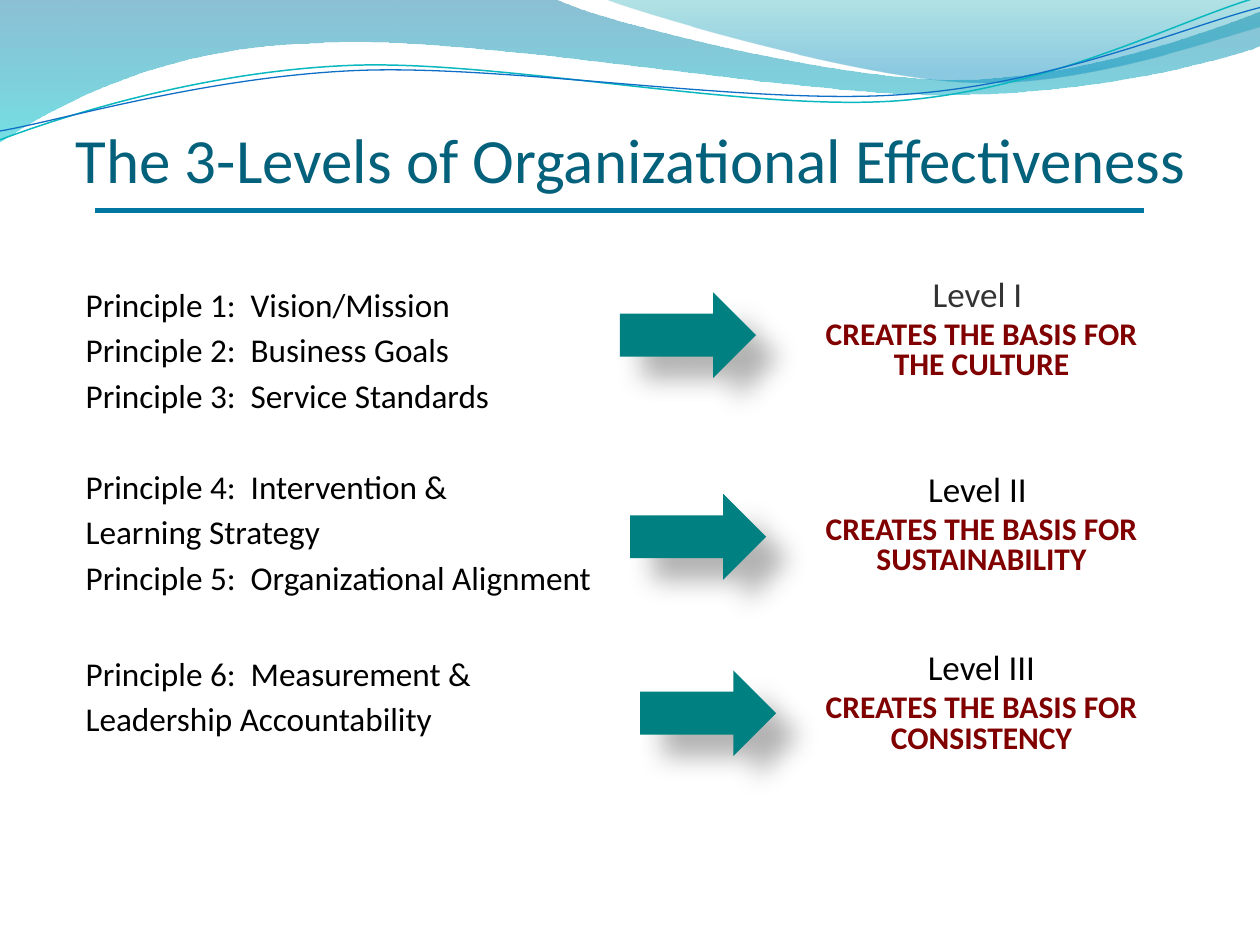
from lxml.etree import SubElement
from pptx import Presentation
from pptx.dml.color import RGBColor
from pptx.enum.shapes import MSO_CONNECTOR as Link, MSO_SHAPE as Shape
from pptx.enum.text import MSO_ANCHOR as Anchor, MSO_AUTO_SIZE as Fit, PP_ALIGN as Align
from pptx.oxml.ns import qn
from pptx.util import Inches, Pt

WIDE, HIGH = 10, 7.5
FONT = "Calibri"
HUE = {
    "title": "04617B", "rule": "0076A3", "text": "000000", "soft": "333333",
    "claim": "800000", "arrow": "008080", "teal": "0AB8BF", "blue": "0F6FC6",
    "deep": "0074A1", "aqua": "00C6CF", "sea": "00A1A9", "sky": "008BBF",
}

# Waves: start point, then steps of 1 point (line) or 3 points (curve)
BANDS = [
    ([(0, 0), [(4.4, -0.01)],
      [(4.76, 0.17), (6.64, 0.63), (7.58, 0.63)],
      [(8.53, 0.63), (9.58, 0.26), (10, 0.09)], [(10.01, 0.36)],
      [(9.83, 0.44), (8.7, 0.76), (7.46, 0.75)],
      [(6.22, 0.75), (3.82, 0.28), (2.57, 0.34)],
      [(1.29, 0.36), (0.46, 0.83), (-0.01, 1.13)], [(0, 0)]],
     [(0, "deep", 45), (1, "aqua", 55)]),
    ([(4.79, -0.01), [(5.09, 0.11), (6.82, 0.62), (7.69, 0.65)],
      [(8.56, 0.69), (9.61, 0.32), (10, 0.21)], [(10, 0)], [(4.79, -0.01)]],
     [(0, "sea", 30), (0.8, "sky", 45)]),
]
CURVES = [
    ([(0, 1.11), [(0.48, 0.93), (1.58, 0.57), (2.77, 0.52)],
      [(3.95, 0.47), (5.93, 0.89), (7.13, 0.8)],
      [(8.33, 0.71), (9.38, 0.15), (9.98, -0.02)]], "teal", 0.85),
    ([(0, 1.04), [(0.47, 0.96), (1.64, 0.61), (2.83, 0.56)],
      [(4.03, 0.51), (5.97, 0.84), (7.17, 0.75)],
      [(8.36, 0.67), (9.41, 0.21), (10, 0.06)]], "blue", 0.75),
]

# Principles by level: space above the group in points, then its lines
GROUPS = [
    (0, ["Principle 1:  Vision/Mission", "Principle 2:  Business Goals",
         "Principle 3:  Service Standards"]),
    (26, ["Principle 4:  Intervention &", "Learning Strategy",
          "Principle 5:  Organizational Alignment"]),
    (29, ["Principle 6:  Measurement &", "Leadership Accountability"]),
]
# Levels: space above, name, colour of the name, claim
LEVELS = [
    (0, "Level I ", "soft", "CREATES THE BASIS FOR THE CULTURE"),
    (53.6, "Level II ", "text", "CREATES THE BASIS FOR SUSTAINABILITY"),
    (44.2, "Level III", "text", "CREATES THE BASIS FOR CONSISTENCY"),
]
ARROWS = [2.32, 3.92, 5.32]


def rgb(name):
    return RGBColor.from_string(HUE[name])


def bend(wave, steps):
    """Join the points of each curved step into one cubic curve."""
    lines = iter(list(wave.element.iter(qn("a:lnTo"))))
    for step in steps:
        parts = [next(lines) for _ in step]
        if len(parts) == 3:
            parts[0].addprevious(cubic := parts[0].makeelement(qn("a:cubicBezTo")))
            for part in parts:
                cubic.append(part[0])
                part.getparent().remove(part)


def add_wave(slide, path, order, closed):
    start, *steps = path
    pen = slide.shapes.build_freeform(*map(Inches, start))
    pen.add_line_segments(
        [(Inches(x), Inches(y)) for step in steps for x, y in step], close=closed)
    wave = pen.convert_to_shape()
    bend(wave, steps)
    wave.shadow.inherit = False
    # Waves lie behind the placeholders
    slide.shapes.element.insert(2 + order, wave.element)
    return wave


def add_band(slide, path, stops, order):
    band = add_wave(slide, path, order, True)
    band.line.fill.background()
    band.fill.gradient()
    band.fill.gradient_angle = 270
    for stop, (spot, tone, _) in zip(band.fill.gradient_stops, stops):
        stop.position = spot
        stop.color.rgb = rgb(tone)
    for tint, (_, _, alpha) in zip(band.element.spPr.iter(qn("a:srgbClr")), stops):
        SubElement(tint, qn("a:alpha"), val=str(alpha * 1000))


def add_curve(slide, path, tone, width, order):
    curve = add_wave(slide, path, order, False)
    curve.fill.background()
    curve.line.color.rgb = rgb(tone)
    curve.line.width = Pt(width)


def place(holder, left, top, width, height, inset=0.04):
    holder.left, holder.top = Inches(left), Inches(top)
    holder.width, holder.height = Inches(width), Inches(height)
    frame = holder.text_frame
    frame.word_wrap = True
    frame.auto_size = Fit.NONE
    frame.vertical_anchor = Anchor.TOP
    frame.margin_top = Inches(inset)
    return frame


def add_line(frame, text, size, tone, above=0, gap=1.0, align=Align.LEFT, bold=False):
    first = frame.paragraphs[0]
    para = first if not first.runs else frame.add_paragraph()
    para.alignment = align
    para.line_spacing = gap
    para.space_before = Pt(above)
    props = para._p.get_or_add_pPr()
    props.set("marL", "0")
    props.set("indent", "0")
    SubElement(props, qn("a:buNone"))
    run = para.add_run()
    run.text = text
    run.font.name, run.font.size, run.font.bold = FONT, Pt(size), bold
    run.font.color.rgb = rgb(tone)


def add_rule(slide, left, right, top):
    rule = slide.shapes.add_connector(
        Link.STRAIGHT, Inches(left), Inches(top), Inches(right), Inches(top))
    rule.line.color.rgb = rgb("rule")
    rule.line.width = Pt(3)
    SubElement(rule.element.spPr, qn("a:effectLst"))


def add_arrow(slide, left, top):
    arrow = slide.shapes.add_shape(
        Shape.RIGHT_ARROW, Inches(left), Inches(top), Inches(1.08), Inches(0.68))
    arrow.fill.solid()
    arrow.fill.fore_color.rgb = rgb("arrow")
    arrow.line.fill.background()
    arrow.shadow.inherit = False
    cast = SubElement(
        arrow.element.spPr.find(qn("a:effectLst")), qn("a:outerShdw"),
        blurRad=str(Pt(15)), dist=str(Pt(18)), dir=str(45 * 60000),
        algn="ctr", rotWithShape="0")
    tint = SubElement(cast, qn("a:srgbClr"), val=HUE["text"])
    SubElement(tint, qn("a:alpha"), val="30000")


def main():
    deck = Presentation()
    deck.slide_width, deck.slide_height = Inches(WIDE), Inches(HIGH)
    slide = deck.slides.add_slide(deck.slide_layouts[3])
    title, left, right = slide.placeholders

    # Waves at the top
    for i, (path, stops) in enumerate(BANDS):
        add_band(slide, path, stops, i)
    for i, (path, tone, width) in enumerate(CURVES, len(BANDS)):
        add_curve(slide, path, tone, width, i)

    # Title and rule
    frame = place(title, 0.5, 0.92, 9.25, 1)
    add_line(frame, "The 3-Levels of Organizational Effectiveness", 36, "title")
    add_rule(slide, 0.75, 9.08, 1.67)

    # Principles
    frame = place(left, 0.58, 2.17, 4.25, 4.33)
    for above, lines in GROUPS:
        for i, text in enumerate(lines):
            add_line(frame, text, 19, "text", 0 if i else above, Pt(26))

    # Levels
    frame = place(right, 6.33, 1.75, 2.92, 4.75, 0.48)
    for above, name, tone, claim in LEVELS:
        add_line(frame, name, 20, tone, above, 0.8, Align.CENTER)
        add_line(frame, claim, 18, "claim", 3.9, 0.8, Align.CENTER, True)

    # Arrows from principles to levels
    for i, top in enumerate(ARROWS):
        add_arrow(slide, 4.92 + 0.08 * i, top)

    deck.save("out.pptx")


if __name__ == "__main__":
    main()
